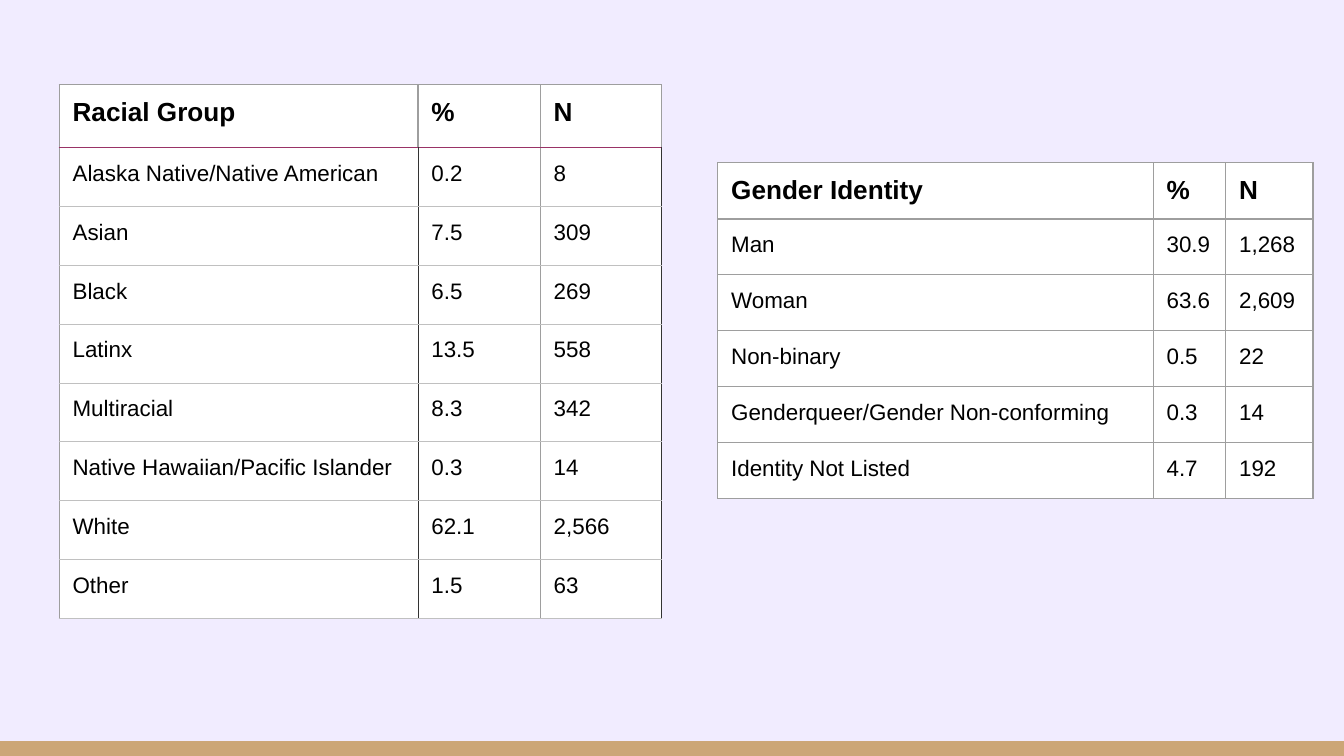
"""Build a slide with two demographic tables: racial group and gender identity."""
from lxml.etree import SubElement
from pptx import Presentation
from pptx.dml.color import RGBColor
from pptx.enum.shapes import MSO_SHAPE
from pptx.oxml.ns import qn
from pptx.util import Inches, Pt

SLIDE_WIDTH = 10
SLIDE_HEIGHT = SLIDE_WIDTH * 9 / 16
BAR_HEIGHT = 0.11

COLORS = {
    "background": "F1ECFF", "bar": "CCA677", "cell": "FFFFFF", "text": "000000",
    "grey": "9E9E9E", "silver": "C0C0C0", "dark": "333333", "plum": "993366",
}
GREY, SILVER = ("grey", 0.75), ("silver", 0.5)
DARK, PLUM = ("dark", 0.5), ("plum", 0.5)

GENDER = {
    "place": (5.34, 1.21), "columns": (3.24, 0.54, 0.65),
    "header_height": 0.42, "height": 2.5,
    "rows": [
        ("Gender Identity", "%", "N"),
        ("Man", "30.9", "1,268"),
        ("Woman", "63.6", "2,609"),
        ("Non-binary", "0.5", "22"),
        ("Genderqueer/Gender Non-conforming", "0.3", "14"),
        ("Identity Not Listed", "4.7", "192"),
    ],
}
RACE = {
    "place": (0.44, 0.63), "columns": (2.67, 0.91, 0.9),
    "header_height": 0.47, "height": 3.97,
    "rows": [
        ("Racial Group", "%", "N"),
        ("Alaska Native/Native American", "0.2", "8"),
        ("Asian", "7.5", "309"),
        ("Black", "6.5", "269"),
        ("Latinx", "13.5", "558"),
        ("Multiracial", "8.3", "342"),
        ("Native Hawaiian/Pacific Islander", "0.3", "14"),
        ("White", "62.1", "2,566"),
        ("Other", "1.5", "63"),
    ],
}
HEADER_FONT = {"name": "Arial", "size": Pt(14), "bold": True}
BODY_FONT = {"name": "Arial", "size": Pt(12), "bold": False}
MARGINS = {f"margin_{side}": Inches(0.1) for side in ("left", "right", "top", "bottom")}


def color(name):
    return RGBColor.from_string(COLORS[name])


def apply(target, values):
    for name, value in values.items():
        setattr(target, name, value)


def gender_borders(row, column):
    return {"L": GREY, "R": GREY, "T": GREY, "B": GREY}


def race_borders(row, column):
    if row == 0:
        return {"L": GREY, "R": GREY, "T": GREY, "B": PLUM}
    left, right = (DARK, GREY) if column == 1 else (GREY, DARK)
    return {"L": left, "R": right, "T": PLUM if row == 1 else SILVER, "B": SILVER}


def set_borders(cell, borders):
    properties = cell._tc.get_or_add_tcPr()
    for side, (name, width) in borders.items():
        line = SubElement(properties, qn(f"a:ln{side}"), w=str(Pt(width)))
        fill = SubElement(line, qn("a:solidFill"))
        SubElement(fill, qn("a:srgbClr"), val=COLORS[name])


def add_data_table(slide, data, borders):
    rows, columns = data["rows"], data["columns"]
    table = slide.shapes.add_table(
        len(rows), len(columns), *map(Inches, data["place"]),
        Inches(sum(columns)), Inches(data["height"])).table
    for column, width in zip(table.columns, columns):
        column.width = Inches(width)
    body_height = (data["height"] - data["header_height"]) / (len(rows) - 1)
    for r, values in enumerate(rows):
        table.rows[r].height = Inches(body_height if r else data["header_height"])
        for c, value in enumerate(values):
            cell = table.cell(r, c)
            set_borders(cell, borders(r, c))
            apply(cell, MARGINS)
            cell.fill.solid()
            cell.fill.fore_color.rgb = color("cell")
            run = cell.text_frame.paragraphs[0].add_run()
            run.text = value
            apply(run.font, BODY_FONT if r else HEADER_FONT)
            run.font.color.rgb = color("text")


def main():
    presentation = Presentation()
    presentation.slide_width = Inches(SLIDE_WIDTH)
    presentation.slide_height = Inches(SLIDE_HEIGHT)
    slide = presentation.slides.add_slide(presentation.slide_layouts[6])
    slide.background.fill.solid()
    slide.background.fill.fore_color.rgb = color("background")

    bar = slide.shapes.add_shape(
        MSO_SHAPE.RECTANGLE, 0, Inches(SLIDE_HEIGHT - BAR_HEIGHT),
        Inches(SLIDE_WIDTH), Inches(BAR_HEIGHT))
    bar.shadow.inherit = False
    bar.fill.solid()
    bar.fill.fore_color.rgb = color("bar")
    bar.line.fill.background()

    add_data_table(slide, GENDER, gender_borders)
    add_data_table(slide, RACE, race_borders)
    presentation.save("out.pptx")


if __name__ == "__main__":
    main()
